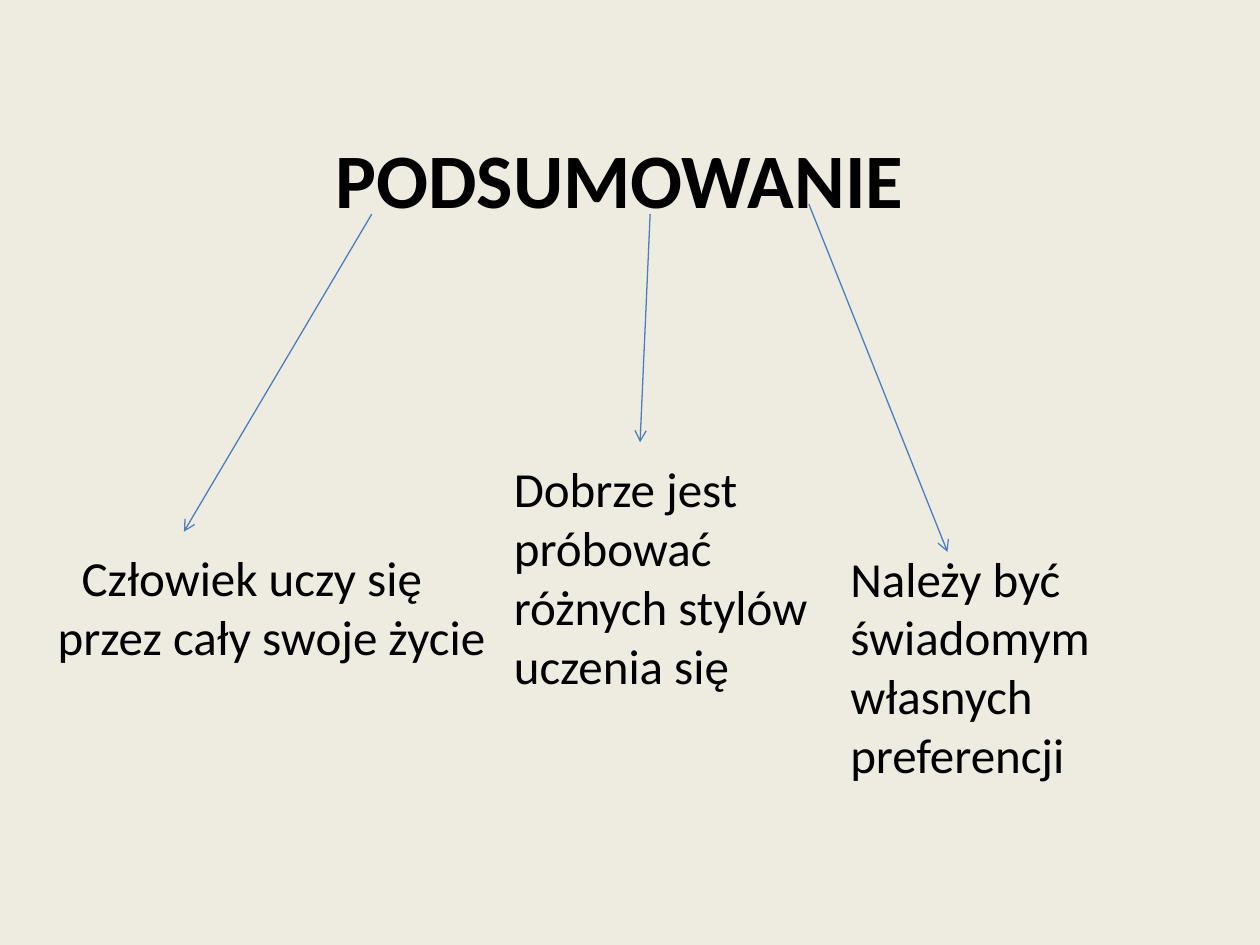
from lxml.etree import SubElement
from pptx import Presentation
from pptx.dml.color import RGBColor
from pptx.enum.shapes import MSO_CONNECTOR
from pptx.enum.text import MSO_ANCHOR, MSO_AUTO_SIZE, PP_ALIGN
from pptx.oxml.ns import qn
from pptx.util import Inches, Pt

CREAM = RGBColor(0xEE, 0xEC, 0xE1)
BLACK = RGBColor(0x00, 0x00, 0x00)
BLUE = RGBColor(0x4B, 0x7E, 0xBC)
FONT = "Calibri"

CONCLUSIONS = [
    ((0.12, 4.3, 4.23, 1.04),
     [("Człowiek uczy się", 0.43), ("przez cały swoje życie", 0.24)],
     ((2.95, 1.7), (1.46, 4.22))),
    ((3.98, 3.59, 2.91, 1.99),
     [("Dobrze jest próbować różnych stylów uczenia się", 0)],
     ((5.16, 1.7), (5.08, 3.51))),
    ((6.65, 4.3, 2.99, 1.99),
     [("Należy być świadomym własnych preferencji", 0)],
     ((6.42, 1.62), (7.52, 4.38))),
]


def add_text(paragraph, wording, size, bold=False):
    paragraph.alignment = PP_ALIGN.LEFT
    run = paragraph.add_run()
    run.text = wording
    run.font.name = FONT
    run.font.size = Pt(size)
    run.font.bold = bold
    run.font.color.rgb = BLACK


def place_heading(slide, box):
    heading = slide.shapes.title
    heading.left, heading.top, heading.width, heading.height = map(Inches, box)
    frame = heading.text_frame
    frame.word_wrap = True
    frame.auto_size = MSO_AUTO_SIZE.SHAPE_TO_FIT_TEXT
    frame.vertical_anchor = MSO_ANCHOR.TOP
    add_text(frame.paragraphs[0], "PODSUMOWANIE", 44, bold=True)


def place_conclusion(slide, box, lines):
    frame = slide.shapes.add_textbox(*map(Inches, box)).text_frame
    frame.word_wrap = True
    frame.auto_size = MSO_AUTO_SIZE.SHAPE_TO_FIT_TEXT
    for number, (wording, indent) in enumerate(lines):
        paragraph = frame.add_paragraph() if number else frame.paragraphs[0]
        add_text(paragraph, wording, 28)
        if indent:
            paragraph._p.get_or_add_pPr().set("marL", str(Inches(indent)))


def place_arrow(slide, start, end):
    arrow = slide.shapes.add_connector(
        MSO_CONNECTOR.STRAIGHT, *map(Inches, start + end))
    arrow.line.color.rgb = BLUE
    arrow.line.width = Pt(0.75)
    SubElement(arrow.line._get_or_add_ln(), qn("a:tailEnd"), type="arrow")
    SubElement(arrow._element.spPr, qn("a:effectLst"))


def main():
    presentation = Presentation()
    presentation.slide_width = Inches(10)
    presentation.slide_height = Inches(7.5)
    slide = presentation.slides.add_slide(presentation.slide_layouts[5])
    slide.background.fill.solid()
    slide.background.fill.fore_color.rgb = CREAM

    place_heading(slide, (2.56, 0.99, 5.91, 0.84))
    for box, lines, (start, end) in CONCLUSIONS:
        place_arrow(slide, start, end)
        place_conclusion(slide, box, lines)

    presentation.save("out.pptx")


if __name__ == "__main__":
    main()
